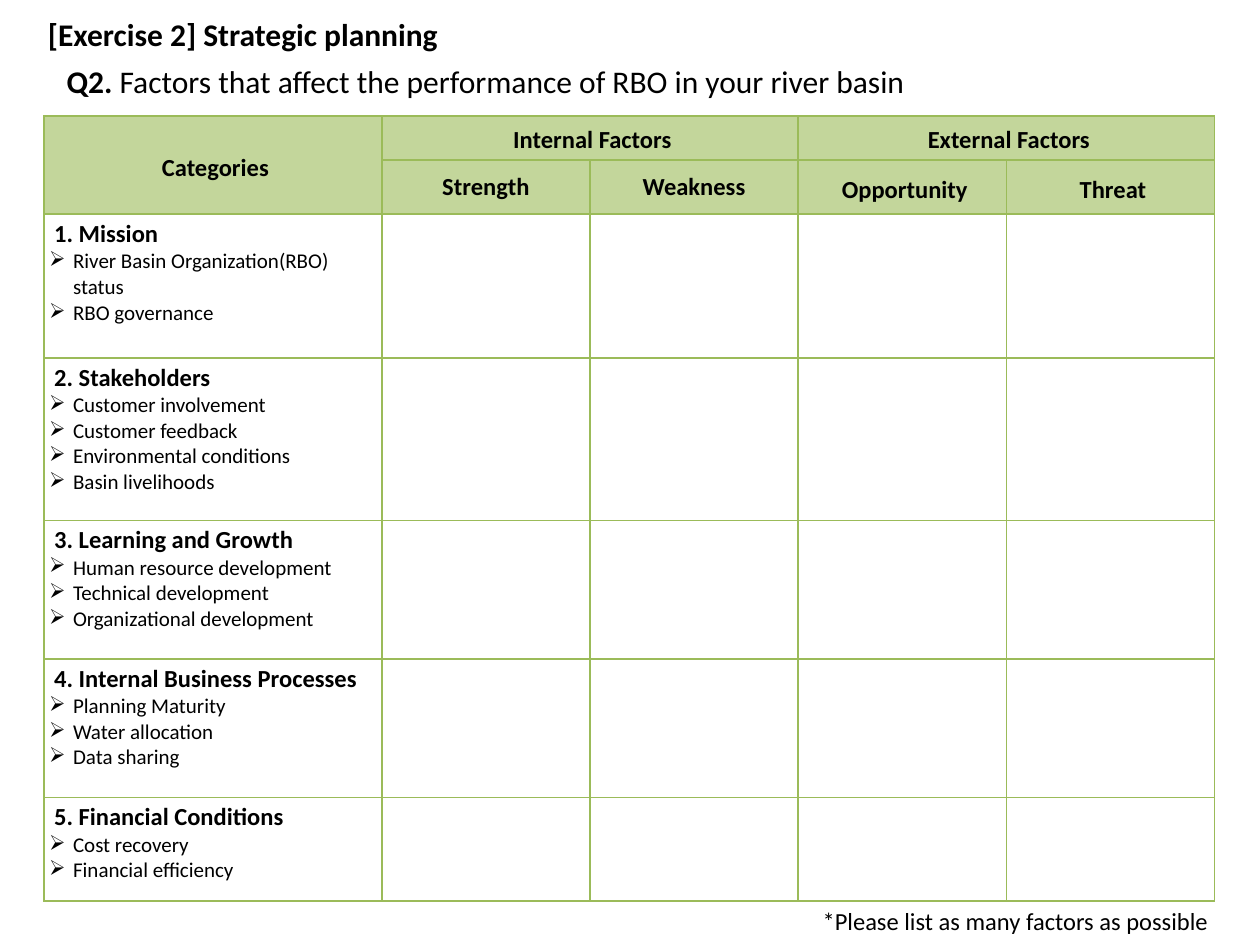
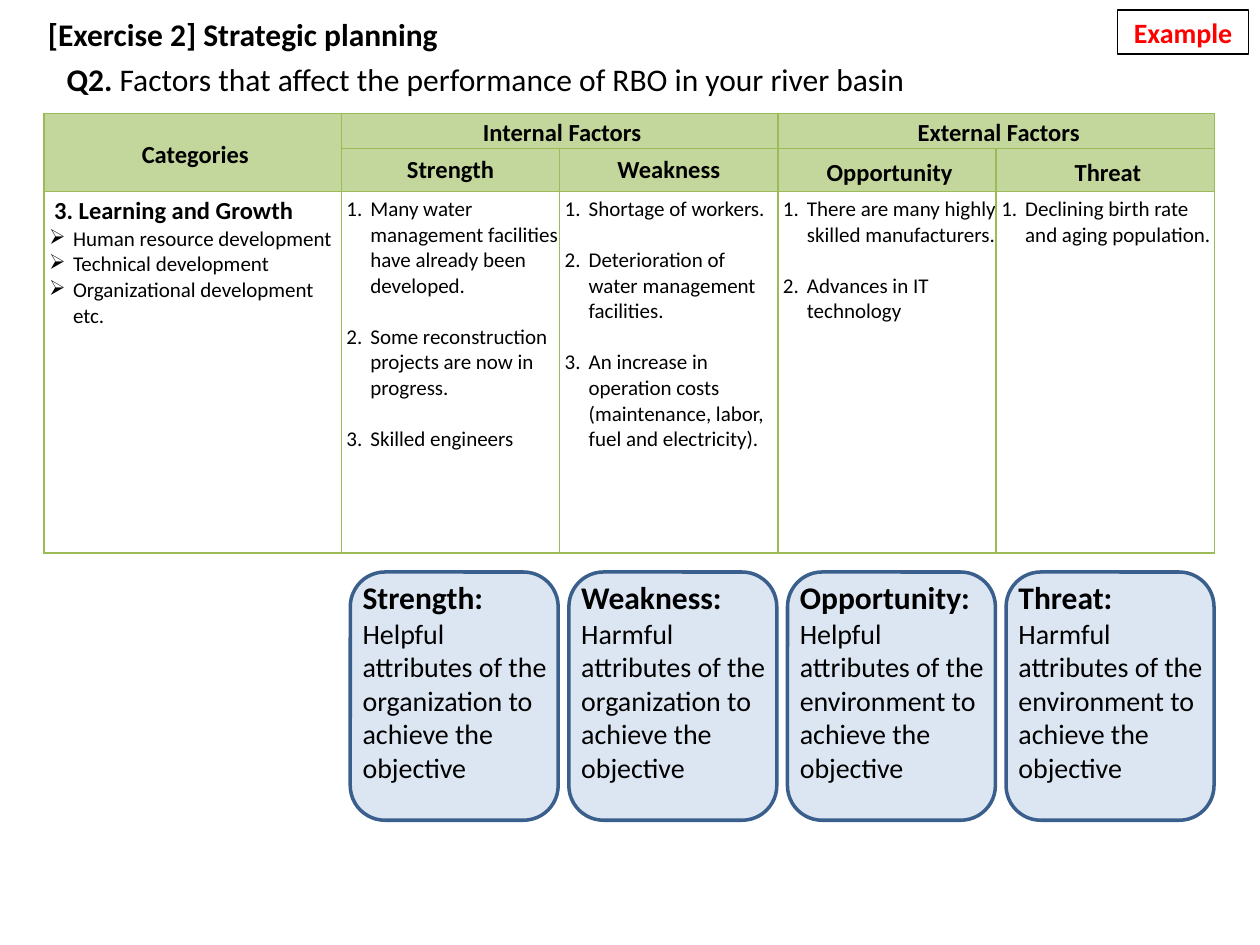
from lxml import etree
from pptx import Presentation
from pptx.dml.color import RGBColor
from pptx.enum import shapes, text
from pptx.oxml import ns
from pptx.util import Inches, Pt

FONT = "Calibri"
BLACK = RGBColor(0x00, 0x00, 0x00)
RED = RGBColor(0xFF, 0x00, 0x00)
HEADER_GREEN = RGBColor(0xC3, 0xD6, 0x9B)
GRID_GREEN = RGBColor(0x9B, 0xBB, 0x59)
CARD_FILL = RGBColor(0xDC, 0xE6, 0xF2)
CARD_LINE = RGBColor(0x3A, 0x5F, 0x8C)

TABLE_LEFT, TABLE_WIDTH = 0.35, 9.29
LIST_INDENT = 0.19
ARROW = ("buChar", {"char": "➢"})
NUMBER = ("buAutoNum", {"type": "arabicPeriod"})

FACTORS = ["Strength", "Weakness", "Opportunity", "Threat"]
GROWTH = ("3. Learning and Growth", ["Human resource development",
                                     "Technical development",
                                     "Organizational development"])
CATEGORIES = [
    ("1. Mission", ["River Basin Organization(RBO) status", "RBO governance"]),
    ("2. Stakeholders", ["Customer involvement", "Customer feedback",
                         "Environmental conditions", "Basin livelihoods"]),
    GROWTH,
    ("4. Internal Business Processes", ["Planning Maturity", "Water allocation",
                                        "Data sharing"]),
    ("5. Financial Conditions", ["Cost recovery", "Financial efficiency"]),
]
EXAMPLE_ANSWERS = [
    ["Many water management facilities have already been developed.",
     "Some reconstruction projects are now in progress.",
     "Skilled engineers"],
    ["Shortage of workers.",
     "Deterioration of water management facilities.",
     "An increase in operation costs (maintenance, labor, fuel and electricity)."],
    ["There are many highly skilled manufacturers.",
     "Advances in IT technology"],
    ["Declining birth rate and aging population."],
]
MEANINGS = [
    "Helpful attributes of the organization to achieve the objective",
    "Harmful attributes of the organization to achieve the objective",
    "Helpful attributes of the environment to achieve the objective",
    "Harmful attributes of the environment to achieve the objective",
]


def inches(*lengths):
    return [Inches(length) for length in lengths]


def style(paragraph, size, bold=False, color=BLACK, align=text.PP_ALIGN.LEFT):
    font = paragraph.font
    font.name, font.size, font.bold = FONT, Pt(size), bold
    font.color.rgb = color
    paragraph.alignment = align


def next_paragraph(frame):
    first = frame.paragraphs[0]
    return frame.add_paragraph() if first.runs else first


def write(frame, words, size, **look):
    paragraph = next_paragraph(frame)
    paragraph.text = words
    style(paragraph, size, **look)
    return paragraph


def set_indent(paragraph, left, hanging=0.0):
    properties = paragraph._p.get_or_add_pPr()
    properties.set("marL", str(Inches(left)))
    properties.set("indent", str(-Inches(hanging)))
    return properties


def write_list(frame, items, bullet, gap=0.0):
    tag, attributes = bullet
    for index, item in enumerate(items):
        paragraph = write(frame, item, 12)
        if index and gap:
            paragraph.space_before = Pt(gap)
        properties = set_indent(paragraph, LIST_INDENT, LIST_INDENT)
        mark = etree.Element(ns.qn("a:" + tag), attributes)
        properties.find(ns.qn("a:defRPr")).addprevious(mark)


def add_text_box(slide, box, wrap=False):
    frame = slide.shapes.add_textbox(*inches(*box)).text_frame
    frame.word_wrap = wrap
    return frame


def add_headings(slide, question_top):
    title = slide.shapes.title
    title.left, title.top, title.width, title.height = inches(0.28, 0.07, 3.32, 0.4)
    frame = title.text_frame
    frame.word_wrap = False
    frame.auto_size = text.MSO_AUTO_SIZE.NONE
    frame.vertical_anchor = text.MSO_ANCHOR.TOP
    write(frame, "[Exercise 2] Strategic planning", 18, bold=True)

    question = add_text_box(slide, (0.43, question_top, 6.94, 0.4)).paragraphs[0]
    label = question.add_run()
    label.text = "Q2. "
    question.add_run().text = (
        "Factors that affect the performance of RBO in your river basin")
    style(question, 18)
    label.font.bold = True


def draw_borders(cell):
    properties = cell._tc.get_or_add_tcPr()
    for side in "LRTB":
        line = etree.SubElement(properties, ns.qn("a:ln" + side), w=str(Pt(1)))
        fill = etree.SubElement(line, ns.qn("a:solidFill"))
        etree.SubElement(fill, ns.qn("a:srgbClr"), val=str(GRID_GREEN))


def format_cell(cell, is_header):
    draw_borders(cell)
    cell.margin_left, cell.margin_top, cell.margin_right, cell.margin_bottom = inches(
        0.04, 0.04, 0, 0)
    if is_header:
        cell.fill.solid()
        cell.fill.fore_color.rgb = HEADER_GREEN
        cell.vertical_anchor = text.MSO_ANCHOR.MIDDLE
    else:
        cell.fill.background()
    style(cell.text_frame.paragraphs[0], 14)


def write_header(table):
    table.cell(0, 0).merge(table.cell(1, 0))
    table.cell(0, 1).merge(table.cell(0, 2))
    table.cell(0, 3).merge(table.cell(0, 4))
    headers = {(0, 0): "Categories", (0, 1): "Internal Factors",
               (0, 3): "External Factors"}
    headers.update({(1, column): factor for column, factor in enumerate(FACTORS, 1)})
    for (row, column), words in headers.items():
        write(table.cell(row, column).text_frame, words, 14, bold=True,
              align=text.PP_ALIGN.CENTER)
    for column in (1, 2):
        cell = table.cell(1, column)
        cell.margin_left = cell.margin_right = Inches(0.1)
        cell.margin_top = cell.margin_bottom = Inches(0.05)


def add_factor_table(slide, top, category_width, row_heights, categories):
    table = slide.shapes.add_table(
        len(row_heights), 5,
        *inches(TABLE_LEFT, top, TABLE_WIDTH, sum(row_heights))).table
    table.first_row = table.horz_banding = False
    factor_width = (TABLE_WIDTH - category_width) / len(FACTORS)
    for column, width in zip(table.columns, [category_width] + [factor_width] * 4):
        column.width = Inches(width)
    for index, height in enumerate(row_heights):
        table.rows[index].height = Inches(height)
        for cell in table.rows[index].cells:
            format_cell(cell, is_header=index < 2)
    write_header(table)
    for row, (name, topics) in enumerate(categories, 2):
        frame = table.cell(row, 0).text_frame
        set_indent(write(frame, name, 14, bold=True), 0.04)
        write_list(frame, topics, ARROW)
    return table


def add_meaning_card(slide, left, top, factor, meaning):
    card = slide.shapes.add_shape(shapes.MSO_SHAPE.ROUNDED_RECTANGLE,
                                  *inches(left, top, 1.65, 1.97))
    card.shadow.inherit = False
    card.fill.solid()
    card.fill.fore_color.rgb = CARD_FILL
    card.line.color.rgb = CARD_LINE
    card.line.width = Pt(2)
    frame = add_text_box(slide, (left, top, 1.73, 1.75), wrap=True)
    write(frame, factor + ":", 18, bold=True)
    write(frame, meaning, 16)


def add_example_tag(slide, left, top):
    tag = slide.shapes.add_shape(shapes.MSO_SHAPE.RECTANGLE,
                                 *inches(left, top, 1.04, 0.35))
    tag.shadow.inherit = False
    tag.fill.background()
    tag.line.color.rgb = BLACK
    tag.line.width = Pt(0.75)
    frame = tag.text_frame
    frame.margin_top = frame.margin_bottom = Inches(0.04)
    write(frame, "Example", 16, bold=True, color=RED, align=text.PP_ALIGN.CENTER)


def build_worksheet(slide):
    add_headings(slide, 0.44)
    add_factor_table(slide, 0.92, 2.68, [0.35, 0.43, 1.14, 1.29, 1.1, 1.1, 0.82],
                     CATEGORIES)
    note = add_text_box(slide, (6.43, 7.14, 3.29, 0.34))
    write(note, "*Please list as many factors as possible", 14)


def build_example(slide):
    add_headings(slide, 0.43)
    name, topics = GROWTH
    category = (name, topics[:-1] + [topics[-1] + " etc."])
    table = add_factor_table(slide, 0.9, 2.36, [0.28, 0.34, 2.87], [category])
    for column, answers in enumerate(EXAMPLE_ANSWERS, 1):
        write_list(table.cell(2, column).text_frame, answers, NUMBER, gap=14.6)
    for index, (factor, meaning) in enumerate(zip(FACTORS, MEANINGS)):
        add_meaning_card(slide, 2.78 + index * 1.735, 4.54, factor, meaning)
    add_example_tag(slide, 8.87, 0.08)


def main():
    deck = Presentation()
    deck.slide_width, deck.slide_height = inches(10, 7.5)
    title_only = deck.slide_layouts[5]
    for build in (build_worksheet, build_example):
        build(deck.slides.add_slide(title_only))
    deck.save("out.pptx")


if __name__ == "__main__":
    main()
